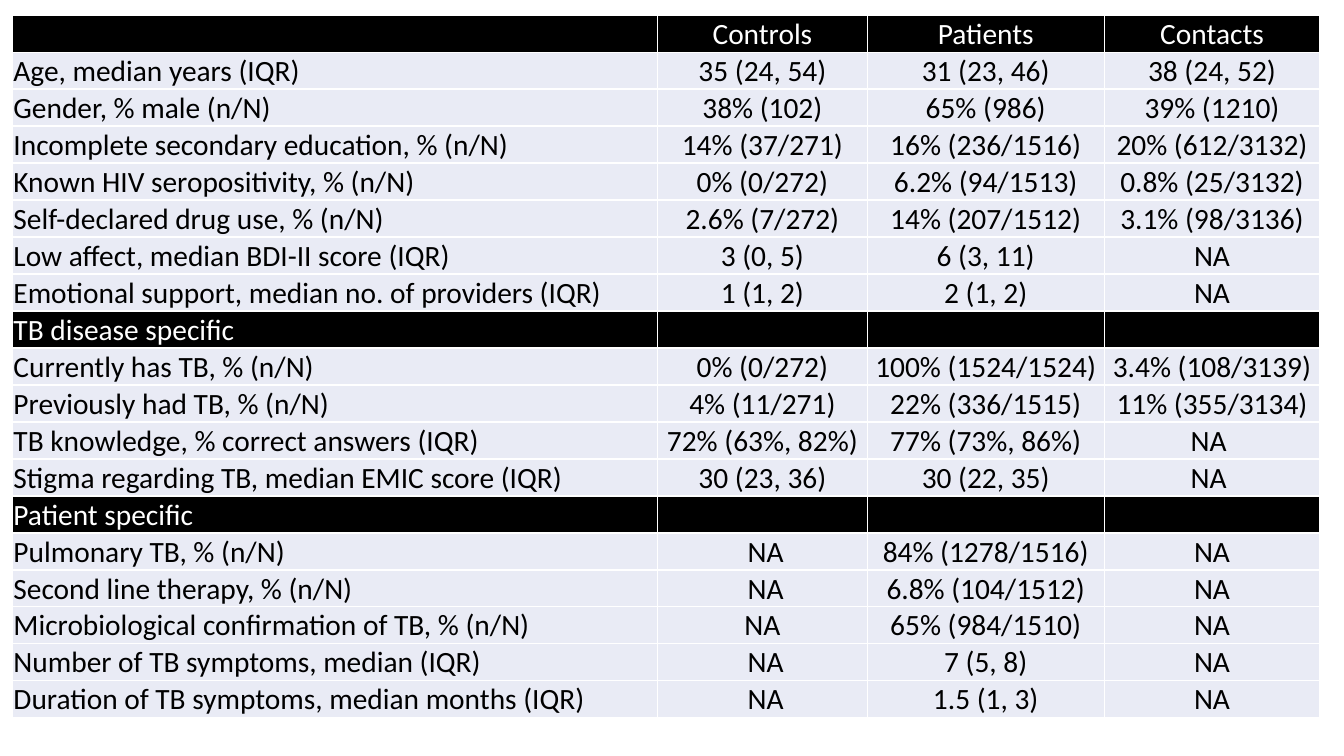
"""Build a slide with a table of participant characteristics by study group."""
import pptx
import pptx.dml.color
import pptx.enum.text
import pptx.oxml
import pptx.oxml.ns
import pptx.util

Pt = pptx.util.Pt
ALIGN = pptx.enum.text.PP_ALIGN

SECTIONS = [
    (("", "Controls", "Patients", "Contacts"), [
        ("Age, median years (IQR)", "35 (24, 54)", "31 (23, 46)", "38 (24, 52)"),
        ("Gender, % male (n/N)", "38% (102)", "65% (986)", "39% (1210)"),
        ("Incomplete secondary education, % (n/N)", "14% (37/271)", "16% (236/1516)", "20% (612/3132)"),
        ("Known HIV seropositivity, % (n/N)", "0% (0/272)", "6.2% (94/1513)", "0.8% (25/3132)"),
        ("Self-declared drug use, % (n/N)", "2.6% (7/272)", "14% (207/1512)", "3.1% (98/3136)"),
        ("Low affect, median BDI-II score (IQR)", "3 (0, 5)", "6 (3, 11)", "NA"),
        ("Emotional support, median no. of providers (IQR)", "1 (1, 2)", "2 (1, 2)", "NA"),
    ]),
    (("TB disease specific", "", "", ""), [
        ("Currently has TB, % (n/N)", "0% (0/272)", "100% (1524/1524)", "3.4% (108/3139)"),
        ("Previously had TB, % (n/N)", "4% (11/271)", "22% (336/1515)", "11% (355/3134)"),
        ("TB knowledge, % correct answers (IQR)", "72% (63%, 82%)", "77% (73%, 86%)", "NA "),
        ("Stigma regarding TB, median EMIC score (IQR)", "30 (23, 36)", "30 (22, 35)", "NA "),
    ]),
    (("Patient specific", "", "", ""), [
        ("Pulmonary TB, % (n/N)", " NA", "84% (1278/1516)", "NA"),
        ("Second line therapy, % (n/N)", " NA", "6.8% (104/1512)", "NA"),
        ("Microbiological confirmation of TB, % (n/N)", "NA", "65% (984/1510)", "NA"),
        ("Number of TB symptoms, median (IQR)", " NA", "7 (5, 8)", "NA"),
        ("Duration of TB symptoms, median months (IQR)", " NA", "1.5 (1, 3)", "NA"),
    ]),
]
THEME = {
    "font": "Calibri", "size": 21, "border": "FFFFFF", "border_width": 1,
    "heading": {"fill": "000000", "text": "FFFFFF"},
    "body": {"fill": "E9EBF5", "text": "000000"},
}
CELL_FORMAT = {
    "margin_left": Pt(0.72), "margin_top": Pt(0.72),
    "margin_right": Pt(0.72), "margin_bottom": Pt(0),
    "vertical_anchor": pptx.enum.text.MSO_ANCHOR.MIDDLE,
}
TABLE_FORMAT = {"first_row": False, "horz_banding": False}
SLIDE_SIZE = (960, 540)
TABLE_LEFT, TABLE_TOP = 8.9, 10.8
COLUMN_WIDTHS = [460.8, 149.8, 169.2, 154.1]
ROW_HEIGHT = 26.22


def apply_format(target, values):
    """Set every attribute named in a dict."""
    for name, value in values.items():
        setattr(target, name, value)


def add_borders(cell):
    """Draw a thin line on all four sides of a cell."""
    properties = cell._tc.get_or_add_tcPr()
    for side in ("lnL", "lnR", "lnT", "lnB"):
        properties.append(pptx.oxml.parse_xml(
            f'<a:{side} {pptx.oxml.ns.nsdecls("a")} w="{Pt(THEME["border_width"])}">'
            f'<a:solidFill><a:srgbClr val="{THEME["border"]}"/></a:solidFill></a:{side}>'))


def write_text(cell, text, alignment, color):
    """Write one formatted line, or size the blank line of an empty cell."""
    paragraph = cell.text_frame.paragraphs[0]
    paragraph.alignment = alignment
    if not text:
        paragraph._p.append(pptx.oxml.parse_xml(
            f'<a:endParaRPr {pptx.oxml.ns.nsdecls("a")} sz="{THEME["size"] * 100}">'
            f'<a:latin typeface="{THEME["font"]}"/></a:endParaRPr>'))
        return
    run = paragraph.add_run()
    run.text = text
    apply_format(run.font, {"name": THEME["font"], "size": Pt(THEME["size"]), "bold": False})
    run.font.color.rgb = pptx.dml.color.RGBColor.from_string(color)


def fill_row(table, row_index, texts, colors):
    """Format and write all cells of a row."""
    table.rows[row_index].height = Pt(ROW_HEIGHT)
    for column_index, text in enumerate(texts):
        cell = table.cell(row_index, column_index)
        apply_format(cell, CELL_FORMAT)
        add_borders(cell)
        cell.fill.solid()
        cell.fill.fore_color.rgb = pptx.dml.color.RGBColor.from_string(colors["fill"])
        write_text(cell, text, ALIGN.CENTER if column_index else ALIGN.LEFT, colors["text"])


def main():
    """Create the presentation and save it."""
    presentation = pptx.Presentation()
    presentation.slide_width, presentation.slide_height = map(Pt, SLIDE_SIZE)
    slide = presentation.slides.add_slide(presentation.slide_layouts[6])
    rows = []
    for heading, body in SECTIONS:
        rows.append((heading, THEME["heading"]))
        rows.extend((texts, THEME["body"]) for texts in body)
    table = slide.shapes.add_table(
        len(rows), len(COLUMN_WIDTHS), Pt(TABLE_LEFT), Pt(TABLE_TOP),
        Pt(sum(COLUMN_WIDTHS)), Pt(ROW_HEIGHT * len(rows))).table
    apply_format(table, TABLE_FORMAT)
    for column, width in zip(table.columns, COLUMN_WIDTHS):
        column.width = Pt(width)
    for row_index, (texts, colors) in enumerate(rows):
        fill_row(table, row_index, texts, colors)
    presentation.save("out.pptx")


if __name__ == "__main__":
    main()
